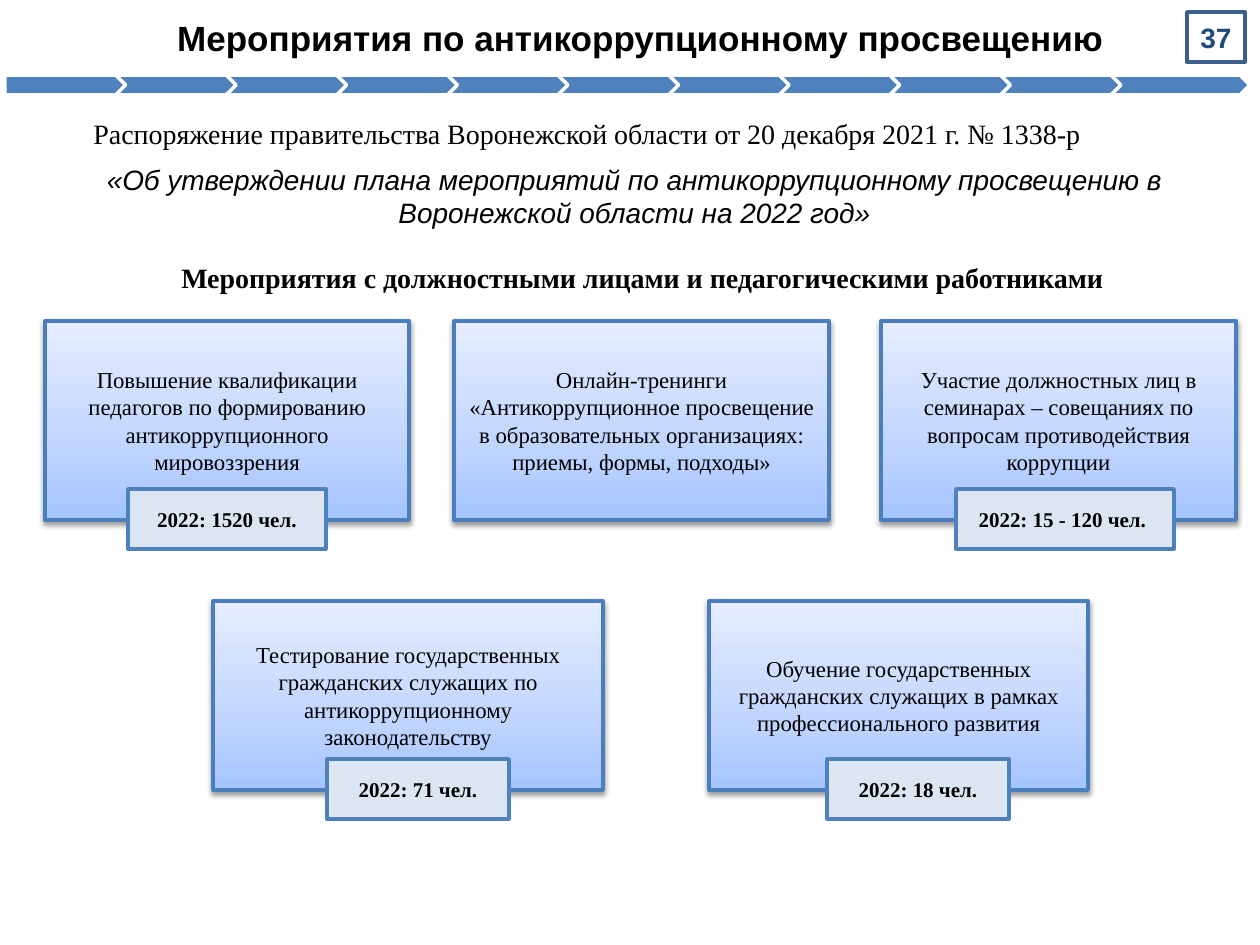
from lxml import etree
from pptx import Presentation
from pptx.dml.color import RGBColor
from pptx.enum.shapes import MSO_SHAPE
from pptx.enum.text import MSO_ANCHOR, MSO_AUTO_SIZE, PP_ALIGN
from pptx.oxml.ns import qn
from pptx.util import Emu, Pt

RECT = MSO_SHAPE.RECTANGLE
PENTA = MSO_SHAPE.PENTAGON
CHEVRON = MSO_SHAPE.CHEVRON
MIDDLE = MSO_ANCHOR.MIDDLE
GROW = MSO_AUTO_SIZE.SHAPE_TO_FIT_TEXT
CENTER = PP_ALIGN.CENTER
LEFT = PP_ALIGN.LEFT

BLACK = RGBColor(0x00, 0x00, 0x00)
WHITE = RGBColor(0xFF, 0xFF, 0xFF)
BLUE = RGBColor(0x4F, 0x81, 0xBD)
EDGE = RGBColor(0x4B, 0x7E, 0xBC)
PALE = RGBColor(0xDC, 0xE6, 0xF2)
NAVY = RGBColor(0x1F, 0x49, 0x7D)
FRAME = RGBColor(0x3A, 0x5F, 0x8C)
STOPS = [
    (0, RGBColor(0xA4, 0xC4, 0xFF)),
    (35, RGBColor(0xBF, 0xD4, 0xFF)),
    (100, RGBColor(0xE6, 0xEE, 0xFF)),
]
SANS = "Arial"
SERIF = "Times New Roman"
SCALE = 914400 / 126


def px(num):
    return Emu(round(num * SCALE))


def write(shape, text, size, face, color=BLACK, bold=False, italic=False, align=CENTER):
    para = shape.text_frame.paragraphs[0]
    para.alignment = align
    run = para.add_run()
    run.text = text
    font = run.font
    font.size, font.name = Pt(size), face
    font.bold, font.italic = bold, italic
    font.color.rgb = color
    return para


def label(slide, box, text, size, face, wrap=True, **style):
    shape = slide.shapes.add_textbox(*map(px, box))
    shape.text_frame.word_wrap = wrap
    shape.text_frame.auto_size = GROW
    return write(shape, text, size, face, **style)


def block(slide, kind, box, line, width, fill=None):
    shape = slide.shapes.add_shape(kind, *map(px, box))
    shape.shadow.inherit = False
    if fill is None:
        shape.fill.background()
    else:
        shape.fill.solid()
        shape.fill.fore_color.rgb = fill
    shape.line.color.rgb = line
    shape.line.width = Pt(width)
    shape.text_frame.word_wrap = True
    shape.text_frame.vertical_anchor = MIDDLE
    return shape


def shade(shape):
    shape.fill.gradient()
    shape.fill.gradient_angle = 90
    props = shape._element.spPr
    stops = props.find(qn("a:gradFill")).find(qn("a:gsLst"))
    for stop in list(stops):
        stops.remove(stop)
    for pos, color in STOPS:
        stop = etree.SubElement(stops, qn("a:gs"), pos=str(pos * 1000))
        etree.SubElement(stop, qn("a:srgbClr"), val=str(color))
    glow = etree.SubElement(
        props.find(qn("a:effectLst")), qn("a:outerShdw"),
        blurRad=str(Pt(3.1)), dist=str(Pt(1.6)), dir="5400000", rotWithShape="0")
    tint = etree.SubElement(glow, qn("a:srgbClr"), val=str(BLACK))
    etree.SubElement(tint, qn("a:alpha"), val="38000")


def header(slide, x, y):
    label(slide, (x + 161, y + 10, 959, 55),
          "Мероприятия по антикоррупционному просвещению", 20, SANS,
          wrap=False, bold=True)
    page = block(slide, RECT, (x + 1187, y + 12, 58, 50), FRAME, 2)
    write(page, "37", 16, SANS, color=NAVY, bold=True)


def ribbon(slide, x, y, width, count=11):
    part = 139
    step = (width - part) / (count - 1)
    for i in range(count):
        kind = CHEVRON if i else PENTA
        block(slide, kind, (x + i * step, y, part, 20), WHITE, 2, BLUE)


def intro(slide, x, y):
    para = label(slide, (x, y, 1232, 47),
                 "Распоряжение правительства Воронежской области от 20 декабря 2021 г. № 1338-р",
                 16, SERIF, align=LEFT)
    para._p.get_or_add_pPr().set("indent", str(px(63)))
    label(slide, (x + 11, y + 46, 1211, 81),
          "«Об утверждении плана мероприятий по антикоррупционному просвещению "
          "в Воронежской области на 2022 год»", 16, SANS, italic=True)
    label(slide, (x + 19, y + 144, 1211, 47),
          "Мероприятия с должностными лицами и педагогическими работниками",
          16, SERIF, bold=True)


def card(slide, box, text, badge=None):
    x, y, width, height = box
    shape = block(slide, RECT, box, EDGE, 2.25)
    shade(shape)
    write(shape, text, 13, SERIF)
    if badge:
        shift, wide, note = badge
        tag = block(slide, RECT, (x + shift, y + height - 31, wide, 60), BLUE, 2, PALE)
        write(tag, note, 12, SERIF, bold=True)


def cards(slide, y, height, items):
    for x, width, text, badge in items:
        card(slide, (x, y, width, height), text, badge)


TOP = [
    (45, 364, "Повышение квалификации педагогов по формированию "
     "антикоррупционного мировоззрения", (83, 198, "2022: 1520 чел.")),
    (454, 375, "Онлайн-тренинги «Антикоррупционное просвещение "
     "в образовательных организациях: приемы, формы, подходы»", None),
    (881, 355, "Участие должностных лиц в семинарах – совещаниях по вопросам "
     "противодействия коррупции", (75, 218, "2022: 15 - 120 чел. ")),
]
LOW = [
    (213, 390, "Тестирование государственных гражданских служащих по "
     "антикоррупционному законодательству", (114, 182, "2022: 71 чел.")),
    (709, 379, "Обучение государственных гражданских служащих в рамках "
     "профессионального развития", (118, 182, "2022: 18 чел.")),
]


def main():
    deck = Presentation()
    deck.slide_width, deck.slide_height = px(1260), px(945)
    slide = deck.slides.add_slide(deck.slide_layouts[6])
    header(slide, 0, 0)
    ribbon(slide, 5, 75, 1245)
    intro(slide, 18, 110)
    cards(slide, 321, 199, TOP)
    cards(slide, 601, 189, LOW)
    deck.save("out.pptx")


if __name__ == "__main__":
    main()
